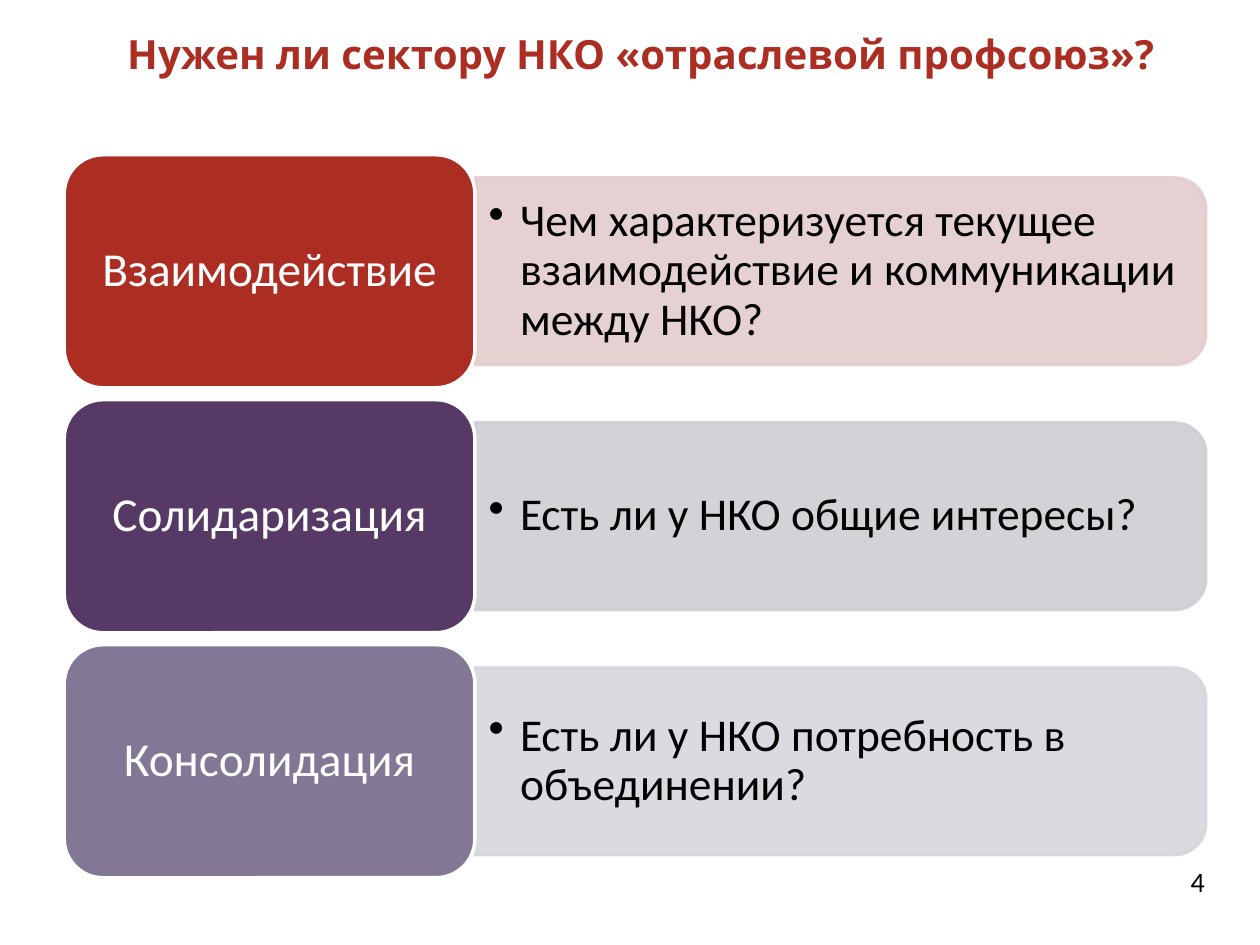
import pptx
import pptx.dml.color
import pptx.enum.shapes
import pptx.enum.text
import pptx.oxml
import pptx.oxml.ns
import pptx.util
from lxml import etree

Pt = pptx.util.Pt
ALIGN = pptx.enum.text.PP_ALIGN
SHAPE = pptx.enum.shapes.MSO_SHAPE

COLORS = {
    "title": "AC2E23",
    "text": "000000",
    "white": "FFFFFF",
    "interaction": "AC2E23",
    "interaction_pale": "E3CDCD",
    "solidarity": "563A65",
    "solidarity_pale": "D1CED3",
    "consolidation": "827896",
    "consolidation_pale": "D8D6DD",
}
ROWS = [
    ("interaction", "Взаимодействие",
     "Чем характеризуется текущее взаимодействие и коммуникации между НКО?"),
    ("solidarity", "Солидаризация", "Есть ли у НКО общие интересы?"),
    ("consolidation", "Консолидация", "Есть ли у НКО потребность в объединении?"),
]
FIRST_CENTER, ROW_STEP = 155, 140
LABEL_LEFT, LABEL_WIDTH, LABEL_HEIGHT = 36.7, 234.7, 133.2
PANEL_LEFT = LABEL_LEFT + LABEL_WIDTH
PANEL_LENGTH, PANEL_HEIGHT = 417.6, 106.6
QUESTION_WIDTH, QUESTION_HEIGHT = 411.8, 96.5


def rgb(name):
    return pptx.dml.color.RGBColor.from_string(COLORS[name])


class SlideBuilder:
    body_font = "Calibri"
    title_font = "Open Sans"
    line_width = 2
    pale_alpha = 90

    def __init__(self, slide):
        self.slide = slide

    def set_text(self, shape, text, size, color, font=None, align=ALIGN.LEFT,
                 bold=False, margins=(7.2, 3.6), spacing=1.0, bullet=False):
        frame = shape.text_frame
        frame.word_wrap = True
        frame.auto_size = pptx.enum.text.MSO_AUTO_SIZE.NONE
        frame.vertical_anchor = pptx.enum.text.MSO_ANCHOR.MIDDLE
        frame.margin_left = frame.margin_right = Pt(margins[0])
        frame.margin_top = frame.margin_bottom = Pt(margins[1])
        frame.text = text
        paragraph = frame.paragraphs[0]
        paragraph.alignment = align
        paragraph.line_spacing = spacing
        if bullet:
            self.add_bullet(paragraph)
        paragraph.font.name = font or self.body_font
        paragraph.font.size = Pt(size)
        paragraph.font.bold = bold
        paragraph.font.color.rgb = rgb(color)

    def add_bullet(self, paragraph, indent=18):
        properties = paragraph._p.get_or_add_pPr()
        properties.set("marL", str(Pt(indent)))
        properties.set("indent", str(-Pt(indent)))
        bullet = etree.SubElement(properties, pptx.oxml.ns.qn("a:buChar"))
        bullet.set("char", "•")

    def title(self, text, left, top, width, height):
        shape = self.slide.shapes.title
        shape.left, shape.top = Pt(left), Pt(top)
        shape.width, shape.height = Pt(width), Pt(height)
        self.set_text(shape, text, 23, "title", font=self.title_font, bold=True)

    def text_box(self, text, left, top, width, height, size, **style):
        shape = self.slide.shapes.add_textbox(Pt(left), Pt(top), Pt(width), Pt(height))
        self.set_text(shape, text, size, "text", **style)

    def block(self, kind, left, top, width, height, fill, line):
        shape = self.slide.shapes.add_shape(kind, Pt(left), Pt(top), Pt(width), Pt(height))
        shape.shadow.inherit = False
        shape.fill.solid()
        shape.fill.fore_color.rgb = rgb(fill)
        shape.line.color.rgb = rgb(line)
        shape.line.width = Pt(self.line_width)
        return shape

    def panel(self, center, color):
        """Pale bar rounded on its right: a top-rounded rectangle turned by 90 degrees."""
        left = PANEL_LEFT + (PANEL_LENGTH - PANEL_HEIGHT) / 2
        shape = self.block(SHAPE.ROUND_2_SAME_RECTANGLE, left, center - PANEL_LENGTH / 2,
                           PANEL_HEIGHT, PANEL_LENGTH, color, color)
        shape.rotation = 90
        for element in shape._element.spPr.iter(pptx.oxml.ns.qn("a:srgbClr")):
            alpha = etree.SubElement(element, pptx.oxml.ns.qn("a:alpha"))
            alpha.set("val", str(self.pale_alpha * 1000))

    def row(self, center, color, label, question):
        self.panel(center, f"{color}_pale")
        self.text_box(question, PANEL_LEFT, center - QUESTION_HEIGHT / 2, QUESTION_WIDTH,
                      QUESTION_HEIGHT, 26, margins=(7.8, 3.9), spacing=0.9, bullet=True)
        shape = self.block(SHAPE.ROUNDED_RECTANGLE, LABEL_LEFT, center - LABEL_HEIGHT / 2,
                           LABEL_WIDTH, LABEL_HEIGHT, color, "white")
        self.set_text(shape, label, 27, "white", align=ALIGN.CENTER,
                      margins=(8, 4), spacing=0.9)


def main():
    presentation = pptx.Presentation()
    presentation.slide_width, presentation.slide_height = Pt(720), Pt(540)
    slide = presentation.slides.add_slide(presentation.slide_layouts[5])
    builder = SlideBuilder(slide)
    builder.title("Нужен ли сектору НКО «отраслевой профсоюз»?", 65.5, 0, 617.8, 60.5)
    for index, row in enumerate(ROWS):
        builder.row(FIRST_CENTER + index * ROW_STEP, *row)
    builder.text_box("4", 667.5, 486.7, 33.8, 33.8, 16, align=ALIGN.CENTER)
    presentation.save("out.pptx")


if __name__ == "__main__":
    main()
